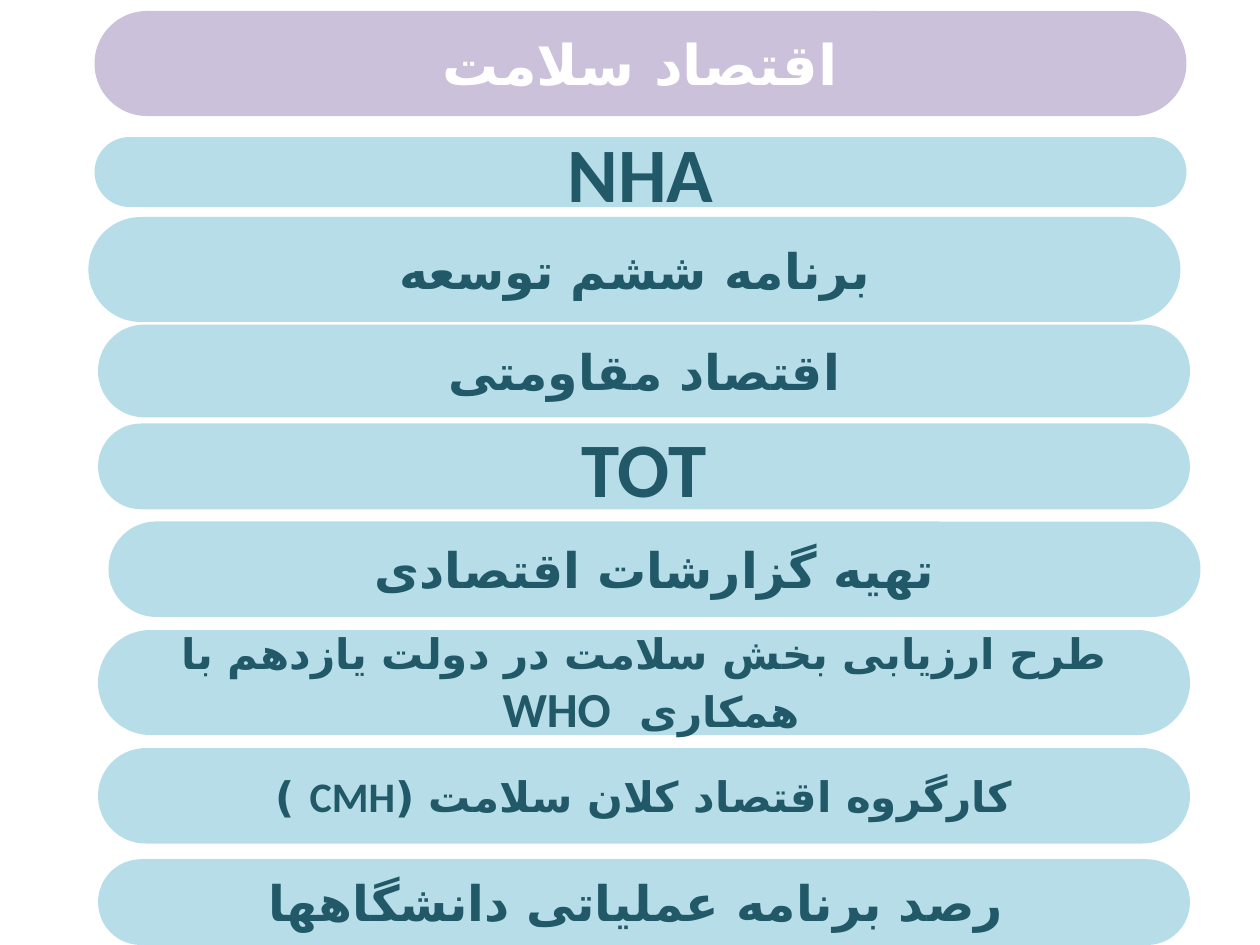
from lxml import etree
from pptx import Presentation
from pptx.dml.color import RGBColor
from pptx.enum.shapes import MSO_SHAPE
from pptx.enum.text import MSO_ANCHOR, PP_ALIGN
from pptx.oxml.ns import qn
from pptx.util import Pt

ROUNDED = MSO_SHAPE.ROUNDED_RECTANGLE
MIDDLE = MSO_ANCHOR.MIDDLE
CENTER = PP_ALIGN.CENTER

WHITE = RGBColor(0xFF, 0xFF, 0xFF)
LILAC = RGBColor(0xCC, 0xC1, 0xDA)
AQUA = RGBColor(0xB7, 0xDE, 0xE8)
TEAL = RGBColor(0x21, 0x59, 0x68)

BAR_W = 624

TOPICS = [
    (54, 78.3, 40, [("NHA", 44)], False),
    (50.5, 124, 60, [("برنامه ششم توسعه", 28)], False),
    (56, 185.5, 53, [("اقتصاد مقاومتی", 28)], True),
    (56, 242, 49, [("TOT", 44)], False),
    (62, 298, 54.5, [("تهیه گزارشات اقتصادی", 28)], False),
    (56, 360, 60, [("طرح ارزیابی بخش سلامت در دولت یازدهم با همکاری  ", 24),
                   ("WHO", 28), (" ", 24)], True),
    (56, 427.5, 54.5, [("کارگروه اقتصاد کلان سلامت (CMH )", 24)], True),
    (56, 491, 49, [("رصد برنامه عملیاتی دانشگاهها ", 28)], False),
]


def add_run(p, text, *, size, color, font="Calibri", arabic="DejaVu Sans", bold=True):
    r = p.add_run()
    r.text = text
    r.font.name = font
    r.font.size = Pt(size)
    r.font.bold = bold
    r.font.color.rgb = color
    etree.SubElement(r.font._element, qn("a:cs"), typeface=arabic)


class Deck:
    """Holds the bar style and the current slide."""

    def __init__(self, s, width):
        self.s = s
        self.width = width

    def bar(self, left, top, height, runs, rtl=False, fill=AQUA, color=TEAL):
        sp = self.s.shapes.add_shape(
            ROUNDED, Pt(left), Pt(top), Pt(self.width), Pt(height))
        sp.adjustments[0] = 0.5
        sp.shadow.inherit = False
        sp.fill.solid()
        sp.fill.fore_color.rgb = fill
        sp.line.fill.background()
        tf = sp.text_frame
        tf.word_wrap = True
        tf.vertical_anchor = MIDDLE
        p = tf.paragraphs[0]
        p.alignment = CENTER
        if rtl:
            p._p.get_or_add_pPr().set("rtl", "1")
        for text, size in runs:
            add_run(p, text, size=size, color=color)


def main():
    prs = Presentation()
    prs.slide_width, prs.slide_height = Pt(720), Pt(540)
    deck = Deck(prs.slides.add_slide(prs.slide_layouts[6]), BAR_W)
    deck.bar(54, 6.3, 60, [("اقتصاد سلامت", 32)], fill=LILAC, color=WHITE)
    for topic in TOPICS:
        deck.bar(*topic)
    prs.save("out.pptx")


if __name__ == "__main__":
    main()
